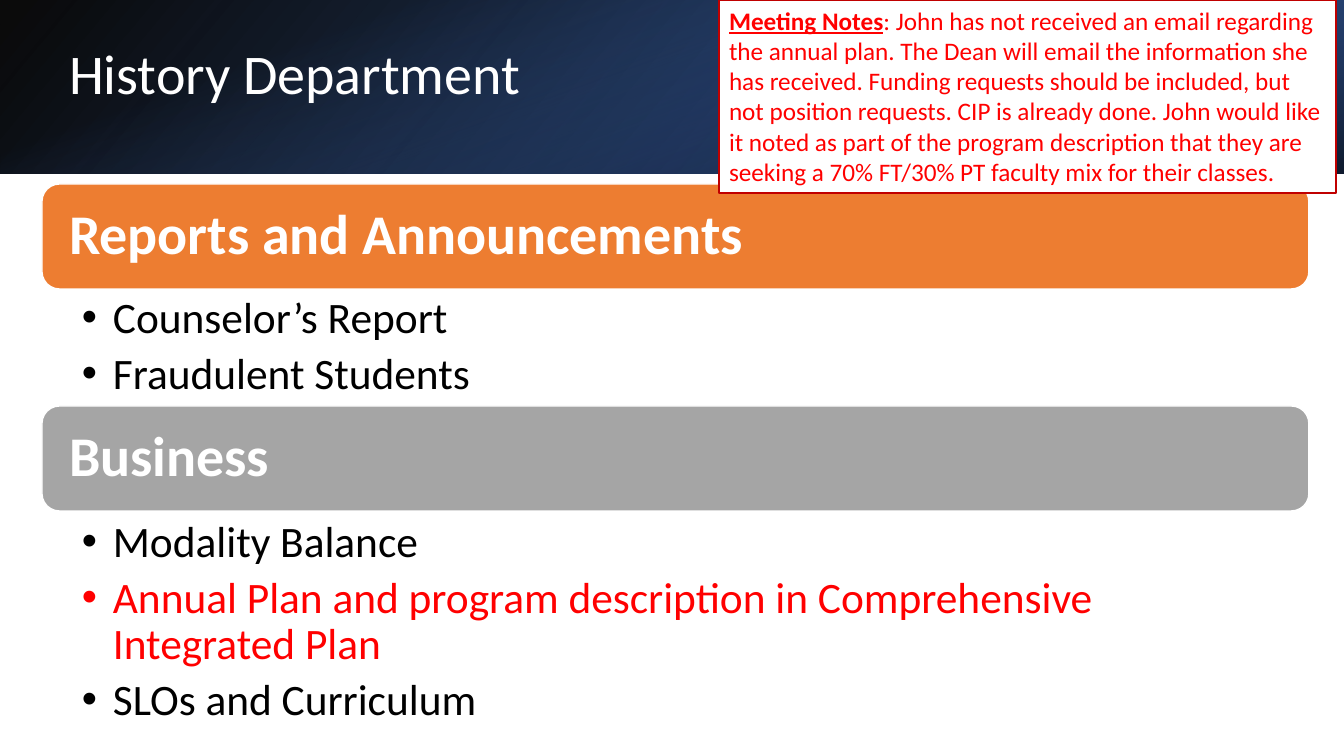
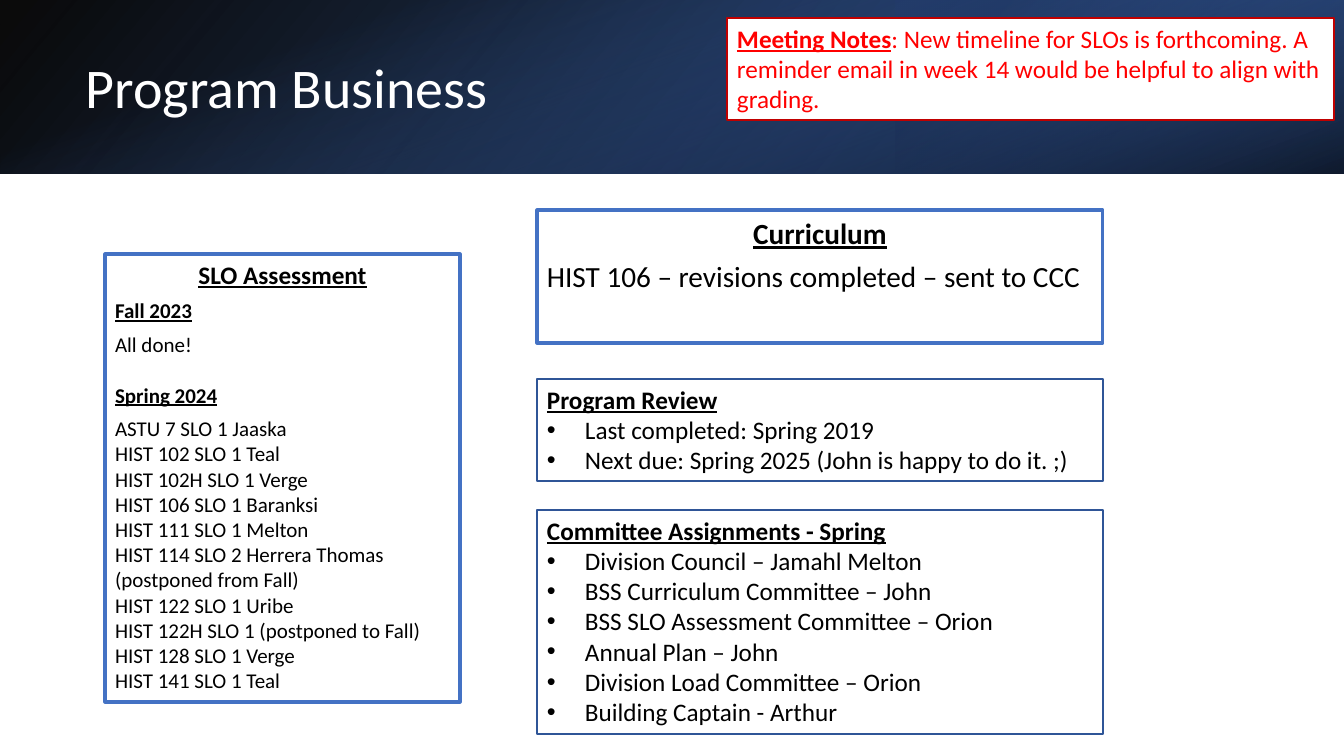
from dataclasses import dataclass

from pptx import Presentation
from pptx.dml.color import RGBColor
from pptx.enum.shapes import MSO_SHAPE
from pptx.enum.text import MSO_ANCHOR, MSO_AUTO_SIZE, PP_ALIGN
from pptx.oxml import parse_xml
from pptx.oxml.ns import nsdecls, qn
from pptx.util import Emu, Pt

RECT, ROUND = MSO_SHAPE.RECTANGLE, MSO_SHAPE.ROUNDED_RECTANGLE
TOP, MIDDLE = MSO_ANCHOR.TOP, MSO_ANCHOR.MIDDLE
LEFT, CENTER = PP_ALIGN.LEFT, PP_ALIGN.CENTER
FIXED = MSO_AUTO_SIZE.NONE

WIDE, HIGH, BAND = 1344, 756, 174


@dataclass(frozen=True)
class Theme:
    font: str = "Calibri"
    white: str = "FFFFFF"
    black: str = "000000"
    red: str = "FF0000"
    wine: str = "C00000"
    orange: str = "ED7D31"
    gray: str = "A5A5A5"
    blue: str = "4472C4"
    steel: str = "2F5597"
    navy: str = "203864"
    title: float = 40
    item: float = 31
    lead: float = 20.9
    body: float = 18
    small: float = 15


T = Theme()


def px(n):
    return Emu(round(n * 914400 / 100.8))


def rgb(code):
    return RGBColor.from_string(code)


# Text
def text(frame, words, size=T.body, color=T.black, bold=False, under=False,
         align=LEFT, after=0, line=1.0, hang=0, join=False):
    """Write a paragraph, or join a run to the last one."""
    para = frame.paragraphs[-1]
    if para.runs and not join:
        para = frame.add_paragraph()
    if not join:
        para.alignment = align
        para.space_before, para.space_after = Pt(0), Pt(after)
        para.line_spacing = line
        if hang:
            bullet(para, hang)
    run = para.add_run()
    run.text = words
    font = run.font
    font.name, font.size = T.font, Pt(size)
    font.bold, font.underline = bold, under
    font.color.rgb = rgb(color)


def bullet(para, hang):
    props = para._p.get_or_add_pPr()
    props.set("marL", str(px(hang)))
    props.set("indent", str(-px(hang)))
    for tag in ('buFont {} typeface="Arial"', 'buChar {} char="•"'):
        props.append(parse_xml("<a:" + tag.format(nsdecls("a")) + "/>"))


def setup(frame, anchor=TOP, pads=(10, 5, 10, 5)):
    frame.word_wrap, frame.auto_size = True, FIXED
    frame.vertical_anchor = anchor
    (frame.margin_left, frame.margin_top,
     frame.margin_right, frame.margin_bottom) = map(px, pads)
    return frame


# Shapes
def box(slide, area, kind=RECT, fill=None, edge=None, width=1.0):
    shape = slide.shapes.add_shape(kind, *map(px, area))
    shape.shadow.inherit = False
    if fill:
        shape.fill.solid()
        shape.fill.fore_color.rgb = rgb(fill)
    else:
        shape.fill.background()
    if edge:
        shape.line.color.rgb = rgb(edge)
        shape.line.width = Pt(width)
    else:
        shape.line.fill.background()
    return shape


def blend(slide, area, stops, angle, turn=0, flip=False):
    """Add a gradient panel; a stop is (place, colour, opacity) in percent."""
    shape = box(slide, area)
    shape.rotation = turn
    props = shape._element.spPr
    if flip:
        props.find(qn("a:xfrm")).set("flipH", "1")
    marks = "".join(
        f'<a:gs pos="{at * 1000}"><a:srgbClr val="{color}">'
        f'<a:alpha val="{alpha * 1000}"/></a:srgbClr></a:gs>'
        for at, color, alpha in stops)
    grad = parse_xml(
        f'<a:gradFill {nsdecls("a")} rotWithShape="1"><a:gsLst>{marks}</a:gsLst>'
        f'<a:lin ang="{angle * 60000}" scaled="0"/></a:gradFill>')
    props.replace(props.find(qn("a:noFill")), grad)


# Shared slide frame
def page(deck, title, area):
    slide = deck.slides.add_slide(deck.slide_layouts[5])
    blend(slide, (0, 0, WIDE, BAND),
          [(0, T.black, 96), (100, T.steel, 100)], 140, flip=True)
    blend(slide, (WIDE * 2 // 3, 0, WIDE // 3, BAND),
          [(19, T.navy, 68), (100, T.blue, 79)], 320, turn=180, flip=True)
    shift = (WIDE - BAND) // 2
    blend(slide, (shift, -shift, BAND, WIDE),
          [(23, T.blue, 0), (99, T.black, 74)], 340, turn=90)
    head = slide.shapes.title
    head.left, head.top, head.width, head.height = map(px, area)
    text(setup(head.text_frame, MIDDLE), title, size=T.title,
         color=T.white, line=0.9)
    slide.shapes._spTree.append(head._element)  # title above the band
    return slide


def notes(slide, area, words):
    shape = box(slide, area, fill=T.white, edge=T.wine, width=1.25)
    frame = setup(shape.text_frame)
    text(frame, "Meeting Notes", color=T.red, bold=True, under=True)
    text(frame, ": " + words, color=T.red, join=True)


# Agenda section: coloured bar with bullets below
def topic(slide, top, fill, head, start, high, items):
    left, width = 42, 1267
    bar = box(slide, (left, top, width, 105), ROUND, fill, T.white)
    text(setup(bar.text_frame, MIDDLE, (22, 17, 22, 17)), head,
         size=T.title, color=T.white, bold=True, line=0.9)
    area = slide.shapes.add_textbox(*map(px, (left, start, width, high)))
    frame = setup(area.text_frame, pads=(40, 6, 31, 6))
    for words, color in items:
        text(frame, words, size=T.item, color=color, after=6.2,
             line=0.9, hang=31)


# Outlined panels
def panel(slide, area, head, edge=T.blue, width=2.25, **form):
    shape = box(slide, area, edge=edge, width=width)
    frame = setup(shape.text_frame)
    text(frame, head, bold=True, under=True, **form)
    return frame


def checks(slide, top, high, head, items):
    frame = panel(slide, (537, top, 566, high), head, T.steel, 1)
    for words in items:
        text(frame, words, hang=38)


def agenda(deck):
    slide = page(deck, "History Department", (59, 28, 1107, 97))
    topic(slide, 184, T.orange, "Reports and Announcements", 290, 119, [
        ("Counselor’s Report", T.black),
        ("Fraudulent Students", T.black)])
    topic(slide, 406, T.gray, "Business", 514, 224, [
        ("Modality Balance", T.black),
        ("Annual Plan and program description in Comprehensive "
         "Integrated Plan", T.red),
        ("SLOs and Curriculum", T.black)])
    notes(slide, (719, 0, 617, 193),
          "John has not received an email regarding the annual plan. The Dean "
          "will email the information she has received. Funding requests should "
          "be included, but not position requests. CIP is already done. John "
          "would like it noted as part of the program description that they are "
          "seeking a 70% FT/30% PT faculty mix for their classes.")


def program(deck):
    slide = page(deck, "Program Business", (76, 42, 745, 97))

    # Assessment list
    frame = panel(slide, (105, 254, 355, 448), "SLO Assessment",
                  align=CENTER, after=6)
    term = dict(size=T.small, bold=True, under=True, after=6)
    text(frame, "Fall 2023", **term)
    text(frame, "All done!", size=T.small, after=18.3)
    text(frame, "Spring 2024", **term)
    for words in ("ASTU 7 SLO 1 Jaaska", "HIST 102 SLO 1 Teal",
                  "HIST 102H SLO 1 Verge", "HIST 106 SLO 1 Baranksi",
                  "HIST 111 SLO 1 Melton",
                  "HIST 114 SLO 2 Herrera Thomas (postponed from Fall)",
                  "HIST 122 SLO 1 Uribe", "HIST 122H SLO 1 (postponed to Fall)",
                  "HIST 128 SLO 1 Verge", "HIST 141 SLO 1 Teal"):
        text(frame, words, size=T.small)

    # Right column
    frame = panel(slide, (537, 210, 566, 133), "Curriculum",
                  size=T.lead, align=CENTER, after=6)
    text(frame, "HIST 106 – revisions completed – sent to CCC",
         size=T.lead, after=6)
    checks(slide, 379, 102, "Program Review", [
        "Last completed: Spring 2019",
        "Next due: Spring 2025 (John is happy to do it. ;)"])
    checks(slide, 510, 224, "Committee Assignments - Spring", [
        "Division Council – Jamahl Melton",
        "BSS Curriculum Committee – John",
        "BSS SLO Assessment Committee – Orion",
        "Annual Plan – John",
        "Division Load Committee – Orion",
        "Building Captain - Arthur"])
    notes(slide, (727, 18, 607, 102),
          "New timeline for SLOs is forthcoming. A reminder email in week 14 "
          "would be helpful to align with grading.")


def main():
    deck = Presentation()
    deck.slide_width, deck.slide_height = px(WIDE), px(HIGH)
    agenda(deck)
    program(deck)
    deck.save("out.pptx")


if __name__ == "__main__":
    main()
